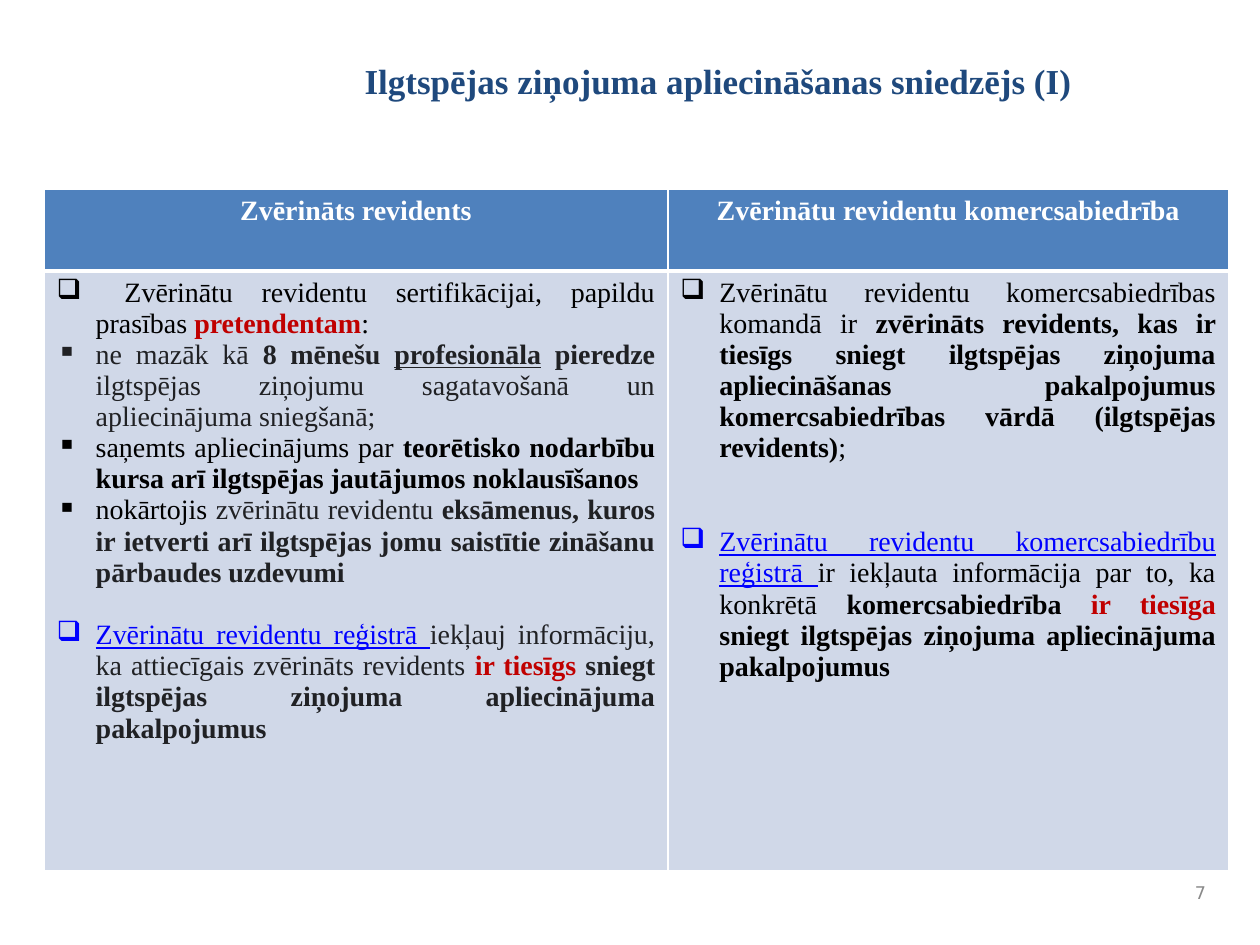
from lxml import etree
from pptx import Presentation
from pptx.dml.color import RGBColor
from pptx.enum.text import MSO_ANCHOR, PP_ALIGN
from pptx.oxml.ns import qn
from pptx.util import Inches, Pt

COLORS = {"title": "1F497D", "header": "4F81BD", "body": "D0D8E8", "white": "FFFFFF",
          "black": "000000", "dark": "202124", "red": "C00000", "link": "0000FF",
          "number": "898989"}
SERIF = "Times New Roman"
SQUARE, DOT = "❑", "▪"


def format_run(span, size, color, bold=False, underline=False, font=SERIF):
    span.font.size = Pt(size)
    span.font.name = font
    span.font.bold = bold
    span.font.underline = underline
    span.font.color.rgb = RGBColor.from_string(COLORS[color])


def style_cell(cell, fill, top, bottom):
    cell.fill.solid()
    cell.fill.fore_color.rgb = RGBColor.from_string(COLORS[fill])
    properties = cell._tc.get_or_add_tcPr()
    edges = [("a:lnL", 1), ("a:lnR", 1), ("a:lnT", top), ("a:lnB", bottom)]
    for position, (tag, width) in enumerate(edges):
        line = etree.Element(qn(tag), w=str(Pt(width)))
        solid = etree.SubElement(line, qn("a:solidFill"))
        etree.SubElement(solid, qn("a:srgbClr"), val=COLORS["white"])
        properties.insert(position, line)


deck = Presentation()
deck.slide_width, deck.slide_height = Inches(10), Inches(7.5)
page = deck.slides.add_slide(deck.slide_layouts[5])

# Title
title = page.shapes.title
title.left, title.top = Inches(1.9), Inches(0.42)
title.width, title.height = Inches(7.6), Inches(1.13)
title.text_frame.text = "Ilgtspējas ziņojuma apliecināšanas sniedzējs (I)"
title.text_frame.vertical_anchor = MSO_ANCHOR.TOP
title.text_frame.paragraphs[0].alignment = PP_ALIGN.CENTER
format_run(title.text_frame.paragraphs[0].runs[0], 20, "title", bold=True)

# Table content: header, then (bullet, space before, runs of text, color, bold, underline)
columns = [
    ("Zvērināts revidents", 4.95, [
        (SQUARE, 0, [
            (" Zvērinātu revidentu sertifikācijai, papildu prasības ", "black", False, False),
            ("pretendentam", "red", True, False),
            (":", "black", False, False)]),
        (DOT, 0, [
            ("ne mazāk kā ", "dark", False, False),
            ("8 mēnešu ", "dark", True, False),
            ("profesionāla", "dark", True, True),
            (" pieredze", "dark", True, False),
            (" ilgtspējas ziņojumu sagatavošanā un apliecinājuma sniegšanā;",
             "dark", False, False)]),
        (DOT, 0, [
            ("saņemts apliecinājums par ", "black", False, False),
            ("teorētisko nodarbību kursa arī ilgtspējas jautājumos noklausīšanos",
             "black", True, False)]),
        (DOT, 0, [
            ("nokārtojis ", "black", False, False),
            ("zvērinātu revidentu ", "dark", False, False),
            ("eksāmenus, kuros ir ietverti arī ilgtspējas jomu saistītie zināšanu "
             "pārbaudes uzdevumi", "dark", True, False)]),
        (SQUARE, 18, [
            ("Zvērinātu revidentu reģistrā ", "link", False, True),
            ("iekļauj informāciju, ka attiecīgais zvērināts revidents ",
             "dark", False, False),
            ("ir tiesīgs ", "red", True, False),
            ("sniegt ilgtspējas ziņojuma apliecinājuma pakalpojumus",
             "dark", True, False)]),
    ]),
    ("Zvērinātu revidentu komercsabiedrība", 4.45, [
        (SQUARE, 0, [
            ("Zvērinātu revidentu komercsabiedrības komandā ir ", "black", False, False),
            ("zvērināts revidents, kas ir tiesīgs sniegt ilgtspējas ziņojuma "
             "apliecināšanas pakalpojumus komercsabiedrības vārdā "
             "(ilgtspējas revidents)", "black", True, False),
            (";", "black", False, False)]),
        (SQUARE, 36, [
            ("Zvērinātu revidentu komercsabiedrību reģistrā ", "link", False, True),
            ("ir iekļauta informācija par to, ka konkrētā ", "black", False, False),
            ("komercsabiedrība ", "black", True, False),
            ("ir tiesīga ", "red", True, False),
            ("sniegt ilgtspējas ziņojuma apliecinājuma pakalpojumus",
             "black", True, False)]),
    ]),
]

# Table
table = page.shapes.add_table(2, 2, Inches(0.35), Inches(1.5),
                              Inches(9.4), Inches(5.41)).table
table.horz_banding = False
table.rows[0].height, table.rows[1].height = Inches(0.65), Inches(4.76)

for index, (heading, width, items) in enumerate(columns):
    table.columns[index].width = Inches(width)
    header, body = table.cell(0, index), table.cell(1, index)
    style_cell(header, "header", 1, 3)
    style_cell(body, "body", 3, 1)

    header.text_frame.text = heading
    header.text_frame.paragraphs[0].alignment = PP_ALIGN.CENTER
    format_run(header.text_frame.paragraphs[0].runs[0], 16, "white", bold=True)

    for number, (bullet, gap, spans) in enumerate(items):
        frame = body.text_frame
        para = frame.add_paragraph() if number else frame.paragraphs[0]
        para.alignment = PP_ALIGN.JUSTIFY
        properties = para._p.get_or_add_pPr()
        properties.set("marL", str(Inches(0.31)))
        properties.set("indent", str(-Inches(0.31)))
        etree.SubElement(properties, qn("a:buChar"), char=bullet)
        if gap:
            para.space_before = Pt(gap)
        for text, color, bold, underline in spans:
            span = para.add_run()
            span.text = text
            format_run(span, 16, color, bold, underline)

# Page number
box = page.shapes.add_textbox(Inches(9.17), Inches(6.92), Inches(0.5), Inches(0.33))
box.text_frame.word_wrap = True
box.text_frame.vertical_anchor = MSO_ANCHOR.MIDDLE
box.text_frame.text = "7"
box.text_frame.paragraphs[0].alignment = PP_ALIGN.RIGHT
format_run(box.text_frame.paragraphs[0].runs[0], 10, "number", font="DejaVu Sans")

deck.save("out.pptx")
